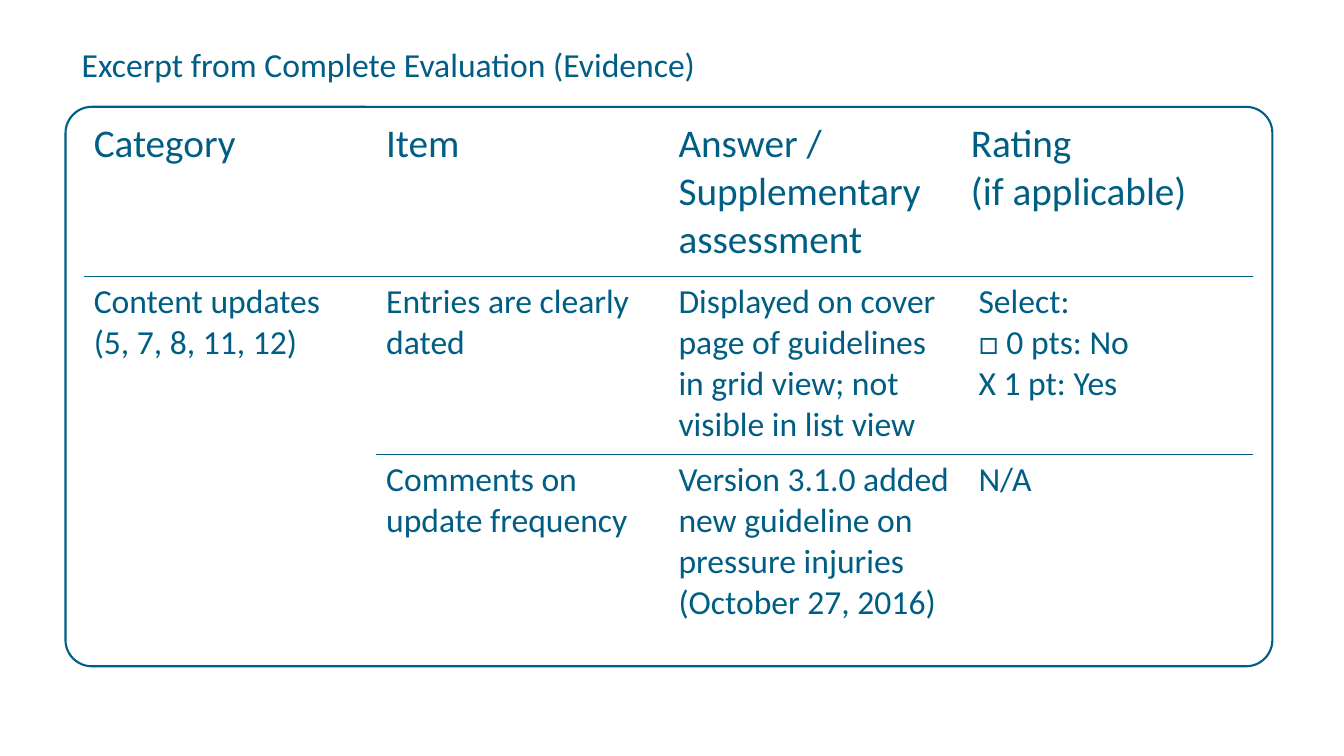
import dataclasses

import pptx
import pptx.dml.color
import pptx.enum.shapes
import pptx.enum.text
import pptx.oxml
import pptx.oxml.ns
import pptx.util
from pptx.util import Inches


@dataclasses.dataclass(frozen=True)
class Theme:
    font: str = "Calibri"
    blue: str = "005E85"
    header_size: int = 28
    body_size: int = 24
    frame_width: float = 1.5
    rule_width: float = 1


THEME = Theme()
NO_GRID_STYLE = "{2D5ABB26-0587-4C30-8999-92F81FD0307C}"
COLUMN_WIDTH = 2.9
ROW_HEIGHTS = (1.6, 1.77, 2.21)
EVALUATION = (
    ("Category", "Item", "Answer / Supplementary assessment",
     "Rating \v(if applicable)"),
    ("Content updates\v(5, 7, 8, 11, 12)", "Entries are clearly dated",
     "Displayed on cover page of guidelines in grid view; not visible in list view",
     " Select:\n □ 0 pts: No\n X 1 pt: Yes"),
    (None, "Comments on update frequency",
     "Version 3.1.0 added new guideline on pressure injuries (October 27, 2016)",
     " N/A"),
)


def blue():
    return pptx.dml.color.RGBColor.from_string(THEME.blue)


def write_text(frame, text, *, size=THEME.body_size, line_spacing=1.0,
               anchor=pptx.enum.text.MSO_ANCHOR.TOP):
    """Fill a text frame; a newline starts a paragraph, a vertical tab a line."""
    frame.text = text
    frame.word_wrap = True
    frame.vertical_anchor = anchor
    for para in frame.paragraphs:
        para.alignment = pptx.enum.text.PP_ALIGN.LEFT
        para.line_spacing = line_spacing
        for span in para.runs:
            span.font.name = THEME.font
            span.font.size = pptx.util.Pt(size)
            span.font.color.rgb = blue()


def add_frame(page):
    frame = page.shapes.add_shape(
        pptx.enum.shapes.MSO_SHAPE.ROUNDED_RECTANGLE,
        Inches(0.65), Inches(1.06), Inches(11.97), Inches(5.55))
    frame.adjustments[0] = 0.047
    frame.shadow.inherit = False
    frame.fill.background()
    frame.line.color.rgb = blue()
    frame.line.width = pptx.util.Pt(THEME.frame_width)


def set_title(page, text):
    title = page.shapes.title
    title.left, title.top = Inches(0.71), Inches(0.4)
    title.width, title.height = Inches(11.7), Inches(0.52)
    write_text(title.text_frame, text, line_spacing=0.9,
               anchor=pptx.enum.text.MSO_ANCHOR.MIDDLE)
    title.text_frame.auto_size = pptx.enum.text.MSO_AUTO_SIZE.NONE


def rule_cell(cell, edge):
    """Draw one border of a cell: edge is lnT or lnB."""
    border = pptx.oxml.parse_xml(
        f'<a:{edge} {pptx.oxml.ns.nsdecls("a")} w="{pptx.util.Pt(THEME.rule_width)}">'
        f'<a:solidFill><a:srgbClr val="{THEME.blue}"/></a:solidFill></a:{edge}>')
    properties = cell._tc.get_or_add_tcPr()
    position = len(properties.findall(pptx.oxml.ns.qn("a:lnT")))
    properties.insert(position, border)


def add_evaluation_table(page):
    columns = len(EVALUATION[0])
    table = page.shapes.add_table(
        len(EVALUATION), columns, Inches(0.83), Inches(1.14),
        Inches(COLUMN_WIDTH * columns), Inches(sum(ROW_HEIGHTS))).table
    table.first_row = table.horz_banding = False
    style = table._tbl.tblPr.find(pptx.oxml.ns.qn("a:tableStyleId"))
    style.text = NO_GRID_STYLE
    for column in table.columns:
        column.width = Inches(COLUMN_WIDTH)
    for row, height in zip(table.rows, ROW_HEIGHTS):
        row.height = Inches(height)
    table.cell(1, 0).merge(table.cell(2, 0))

    last_row = len(EVALUATION) - 1
    for row_index, texts in enumerate(EVALUATION):
        size = THEME.body_size if row_index else THEME.header_size
        for column_index, text in enumerate(texts):
            cell = table.cell(row_index, column_index)
            cell.fill.background()
            if text is None:
                continue
            write_text(cell.text_frame, text, size=size)
            if row_index > 0:
                rule_cell(cell, "lnT")
            if row_index < last_row and not cell.is_merge_origin:
                rule_cell(cell, "lnB")


def main():
    deck = pptx.Presentation()
    deck.slide_width, deck.slide_height = Inches(13.33), Inches(7.5)
    page = deck.slides.add_slide(deck.slide_layouts.get_by_name("Title Only"))
    add_frame(page)
    set_title(page, "Excerpt from Complete Evaluation (Evidence)")
    add_evaluation_table(page)
    deck.save("out.pptx")


if __name__ == "__main__":
    main()
